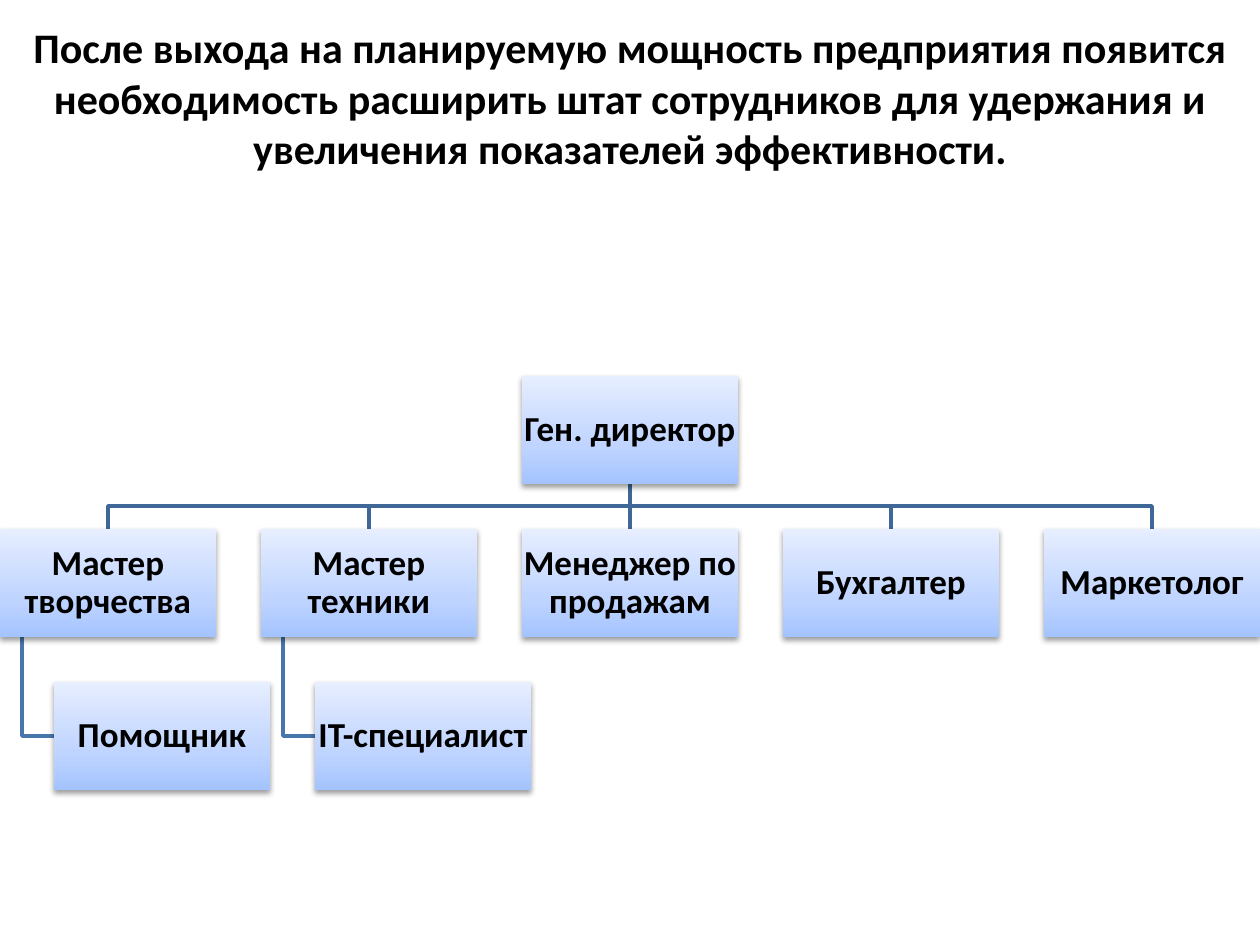
from copy import deepcopy
from dataclasses import dataclass

from pptx import Presentation
from pptx.dml.color import RGBColor as Rgb
from pptx.enum.shapes import MSO_CONNECTOR as Connector, MSO_SHAPE as Preset
from pptx.enum.text import MSO_ANCHOR as Anchor, PP_ALIGN as Align
from pptx.oxml import parse_xml
from pptx.oxml.ns import nsdecls, qn
from pptx.util import Emu, Pt

SCALE = 914400 / 126
PAGE_WIDTH, PAGE_HEIGHT = 1260, 945
TITLE = (
    "После выхода на планируемую мощность предприятия появится необходимость "
    "расширить штат сотрудников для удержания и увеличения показателей эффективности."
)
DIRECTOR = "Ген. директор"
STAFF = [
    ("Мастер творчества", "Помощник"),
    ("Мастер техники", "IT-специалист"),
    ("Менеджер по продажам", None),
    ("Бухгалтер", None),
    ("Маркетолог", None),
]


@dataclass(frozen=True)
class Theme:
    """Colours, type sizes and line widths of the slide."""

    font: str = "Calibri"
    text: str = "000000"
    title_size: int = 24
    box_size: int = 20
    staff_line: str = "3F6797"
    helper_line: str = "4875AC"
    line_width: int = 2
    gradient: tuple = ((0, "A4C4FF"), (0.35, "BFD4FF"), (1, "E6EEFF"))


THEME = Theme()


def px(length):
    """Turn pixels into EMU."""
    return Emu(round(length * SCALE))


def apply(target, values):
    """Set each attribute named in a dict."""
    for name, value in values.items():
        setattr(target, name, value)


def write(shape, text, size, frame_format, para_format):
    """Put one bold centred paragraph into a shape."""
    frame = shape.text_frame
    apply(frame, {"word_wrap": True, "vertical_anchor": Anchor.MIDDLE, **frame_format})
    para = frame.paragraphs[0]
    apply(para, {"alignment": Align.CENTER, **para_format})
    span = para.add_run()
    span.text = text
    apply(span.font, {"name": THEME.font, "size": Pt(size), "bold": True})
    span.font.color.rgb = Rgb.from_string(THEME.text)


def style_line(line, color):
    """Give a link its colour and width."""
    line.color.rgb = Rgb.from_string(color)
    line.width = Pt(THEME.line_width)


def add_title(page, left, top, width, height):
    """Write the heading in the given box."""
    box = page.shapes.add_textbox(*map(px, (left, top, width, height)))
    write(box, TITLE, THEME.title_size, {}, {})


def add_elbow(page, points, color):
    """Draw an open bent link through the given points."""
    builder = page.shapes.build_freeform(*points[0], scale=SCALE)
    builder.add_line_segments(points[1:], close=False)
    link = builder.convert_to_shape()
    link.shadow.inherit = False
    link.fill.background()
    style_line(link.line, color)


def add_stem(page, x, top, bottom):
    """Draw the straight vertical link and return it."""
    ends = map(px, (x, top, x, bottom))
    stem = page.shapes.add_connector(Connector.STRAIGHT, *ends)
    stem._element.spPr.append(parse_xml(f"<a:effectLst {nsdecls('a')}/>"))
    style_line(stem.line, THEME.staff_line)
    return stem


def add_position(page, text, left, top, width, height):
    """Draw one gradient box with a soft shadow and return it."""
    box = page.shapes.add_shape(Preset.RECTANGLE, *map(px, (left, top, width, height)))
    box.line.fill.background()
    box.fill.gradient()
    box.fill.gradient_angle = 90
    properties = box._element.spPr
    stops = properties.find(".//" + qn("a:gsLst"))
    stops.insert(1, deepcopy(stops[0]))
    for stop, (position, color) in zip(box.fill.gradient_stops, THEME.gradient):
        stop.position = position
        stop.color.rgb = Rgb.from_string(color)
    box.shadow.inherit = False
    properties.find(qn("a:effectLst")).append(parse_xml(
        f'<a:outerShdw {nsdecls("a")} blurRad="40000" dist="20000" dir="5400000" '
        'rotWithShape="0"><a:srgbClr val="000000"><a:alpha val="38000"/>'
        "</a:srgbClr></a:outerShdw>"
    ))
    insets = {f"margin_{side}": px(1) for side in ("left", "top", "right", "bottom")}
    write(box, text, THEME.box_size, insets, {"line_spacing": 0.9})
    return box


def add_staff_chart(page, left, top, width, height):
    """Draw the three-level staff tree in the given box."""
    box_width, box_height = 216, 108
    size = (box_width, box_height)
    pitch = (width - box_width) // (len(STAFF) - 1)
    row_pitch = (height - box_height) // 2
    staff_top, helper_top = top + row_pitch, top + 2 * row_pitch
    center = left + width // 2
    root_bottom = top + box_height
    bus = (root_bottom + staff_top) // 2
    indent, drop = 54, 22
    lefts = [left + index * pitch for index in range(len(STAFF))]

    for x, (_, helper) in zip(lefts, STAFF):
        middle = x + box_width // 2
        if middle == center:
            stem = add_stem(page, center, root_bottom, staff_top)
        else:
            route = [(center, root_bottom), (center, bus), (middle, bus), (middle, staff_top)]
            add_elbow(page, route, THEME.staff_line)
        if helper:
            level = helper_top + box_height // 2
            route = [(x + drop, staff_top + box_height), (x + drop, level), (x + indent, level)]
            add_elbow(page, route, THEME.helper_line)

    director = add_position(page, DIRECTOR, center - box_width // 2, top, *size)
    stem.begin_connect(director, 2)
    for x, (role, helper) in zip(lefts, STAFF):
        position = add_position(page, role, x, staff_top, *size)
        if x + box_width // 2 == center:
            stem.end_connect(position, 0)
        if helper:
            add_position(page, helper, x + indent, helper_top, *size)


def main():
    """Build the slide and save it."""
    deck = Presentation()
    apply(deck, {"slide_width": px(PAGE_WIDTH), "slide_height": px(PAGE_HEIGHT)})
    page = deck.slides.add_slide(deck.slide_layouts[6])
    add_title(page, 0, 0, PAGE_WIDTH, 195)
    add_staff_chart(page, 0, 376, PAGE_WIDTH, 414)
    deck.save("out.pptx")


if __name__ == "__main__":
    main()
